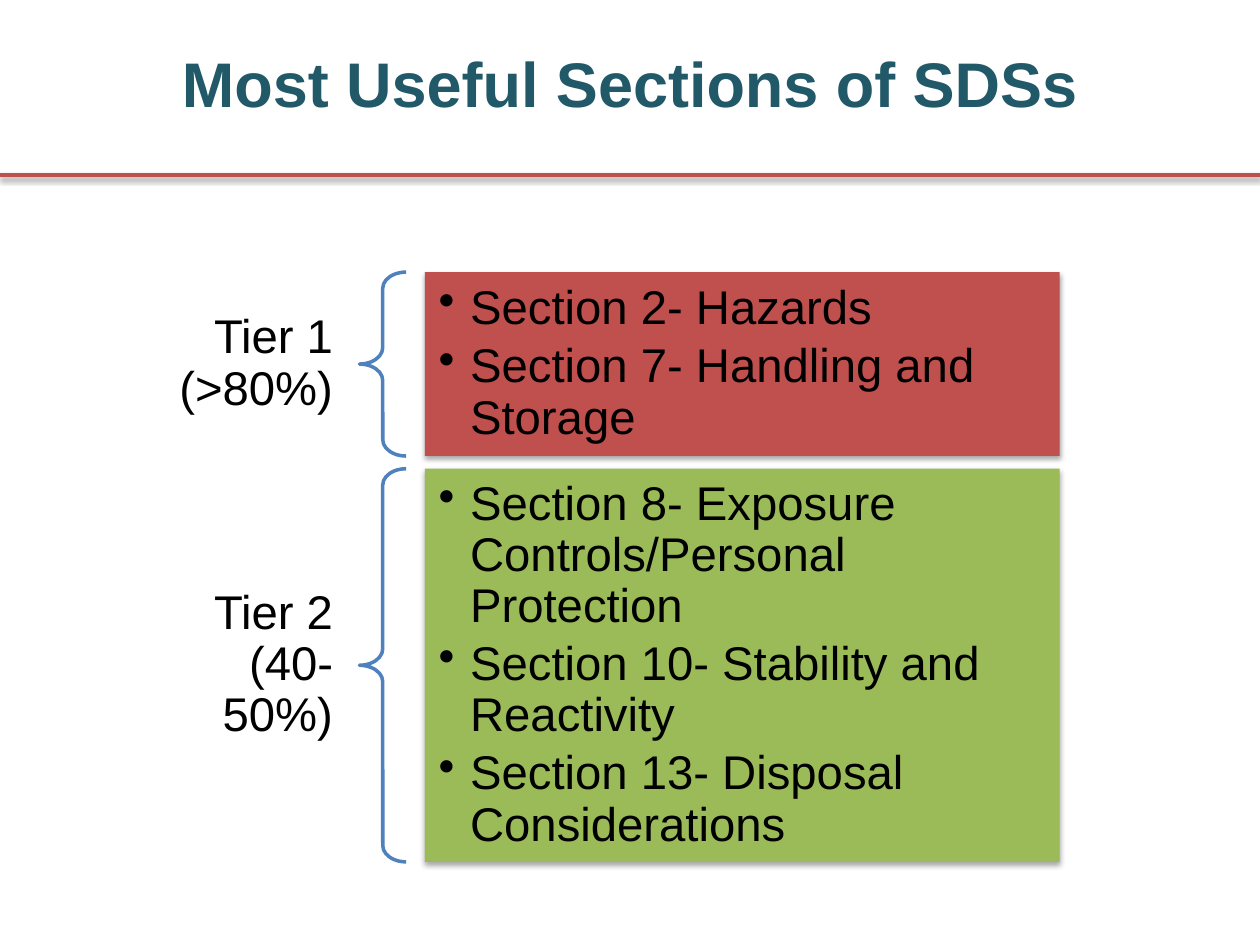
from dataclasses import dataclass
from lxml import etree
from pptx import Presentation
from pptx.dml.color import RGBColor
from pptx.enum import shapes, text
from pptx.oxml import ns
from pptx.util import Inches, Pt

COLS, ROWS = 100, 75


@dataclass(frozen=True)
class Theme:
    font: str = "Arial"
    head: int = 36
    body: int = 27
    line: int = 2
    teal: str = "215968"
    ink: str = "000000"
    blue: str = "4F81BD"
    red: str = "C0504D"
    green: str = "9BBB59"


@dataclass(frozen=True)
class Box:
    x: float
    y: float
    w: float
    h: float

    def inner(self, x, y, w, h):
        return Box(self.x + x * self.w, self.y + y * self.h, w * self.w, h * self.h)

    def emu(self):
        wide, high = Inches(10) / COLS, Inches(7.5) / ROWS
        return [round(v) for v in (self.x * wide, self.y * high, self.w * wide, self.h * high)]


theme = Theme()


def rgb(code):
    return RGBColor.from_string(code)


def shade(shape, dist, alpha):
    props = shape._element.spPr
    effect = props.find(ns.qn("a:effectLst"))
    if effect is None:
        effect = etree.SubElement(props, ns.qn("a:effectLst"))
    outer = etree.SubElement(effect, ns.qn("a:outerShdw"), blurRad=str(Pt(3.1)),
                             dist=str(Pt(dist)), dir="5400000", rotWithShape="0")
    tint = etree.SubElement(outer, ns.qn("a:srgbClr"), val=theme.ink)
    etree.SubElement(tint, ns.qn("a:alpha"), val=str(alpha * 1000))


def bullet(para):
    props = para._p.get_or_add_pPr()
    props.set("marL", str(Inches(0.25)))
    props.set("indent", str(-Inches(0.25)))
    etree.SubElement(props, ns.qn("a:buChar"), char="•")


def write(shape, words, size, color, align, pad, bold=False):
    frame = shape.text_frame
    frame.word_wrap = True
    frame.vertical_anchor = text.MSO_ANCHOR.MIDDLE
    frame.margin_left = frame.margin_right = Inches(pad[0])
    frame.margin_top = frame.margin_bottom = Inches(pad[1])
    frame.text = words
    for para in frame.paragraphs:
        para.alignment = align
        for run in para.runs:
            run.font.name = theme.font
            run.font.size = Pt(size)
            run.font.bold = bold
            run.font.color.rgb = rgb(color)
    return frame.paragraphs


def title(slide, box, words):
    label = slide.shapes.add_textbox(*box.emu())
    write(label, words, theme.head, theme.teal, text.PP_ALIGN.CENTER, (0.1, 0.05), True)


def rule(slide, box):
    x, y, w, h = box.emu()
    line = slide.shapes.add_connector(shapes.MSO_CONNECTOR.STRAIGHT, x, y, x + w, y + h)
    line.line.color.rgb = rgb(theme.red)
    line.line.width = Pt(theme.line)
    shade(line, 1.6, 38)


def tier(slide, box, name, share, color, items):
    label = slide.shapes.add_textbox(*box.inner(0, (1 - share) / 2, 0.25, share).emu())
    for para in write(label, name, theme.body, theme.ink, text.PP_ALIGN.RIGHT, (0.21, 0.07)):
        para.line_spacing = 0.9

    brace = slide.shapes.add_shape(shapes.MSO_SHAPE.LEFT_BRACE, *box.inner(0.25, 0, 0.05, 1).emu())
    brace.adjustments[0] = 0.35
    brace.shadow.inherit = False
    brace.fill.background()
    brace.line.color.rgb = rgb(theme.blue)
    brace.line.width = Pt(theme.line)

    panel = slide.shapes.add_shape(shapes.MSO_SHAPE.RECTANGLE, *box.inner(0.32, 0, 0.68, 1).emu())
    panel.shadow.inherit = False
    panel.fill.solid()
    panel.fill.fore_color.rgb = rgb(color)
    panel.line.fill.background()
    shade(panel, 1.8, 35)
    for para in write(panel, "\n".join(items), theme.body, theme.ink,
                      text.PP_ALIGN.LEFT, (0.11, 0.11)):
        para.line_spacing = 0.9
        para.space_after = Pt(0.15 * theme.body)
        bullet(para)


def tiers(slide, box, gap, rows):
    unit = (box.h - gap * (len(rows) - 1)) / sum(row[0] for row in rows)
    top = box.y
    for size, *row in rows:
        tier(slide, Box(box.x, top, box.w, size * unit), *row)
        top += size * unit + gap


def main():
    deck = Presentation()
    deck.slide_width, deck.slide_height = Inches(10), Inches(7.5)
    slide = deck.slides.add_slide(deck.slide_layouts[6])
    title(slide, Box(5, 0.8, 90, 11.4), "Most Useful Sections of SDSs")
    tiers(slide, Box(10, 21.6, 74.1, 46.8), 1, [
        (14.6, "Tier 1 (>80%)", 0.64, theme.red,
         ["Section 2- Hazards", "Section 7- Handling and Storage"]),
        (31.2, "Tier 2 (40-50%)", 0.42, theme.green,
         ["Section 8- Exposure Controls/Personal Protection",
          "Section 10- Stability and Reactivity",
          "Section 13- Disposal Considerations"]),
    ])
    rule(slide, Box(0, 13.9, COLS, 0))
    deck.save("out.pptx")


if __name__ == "__main__":
    main()
